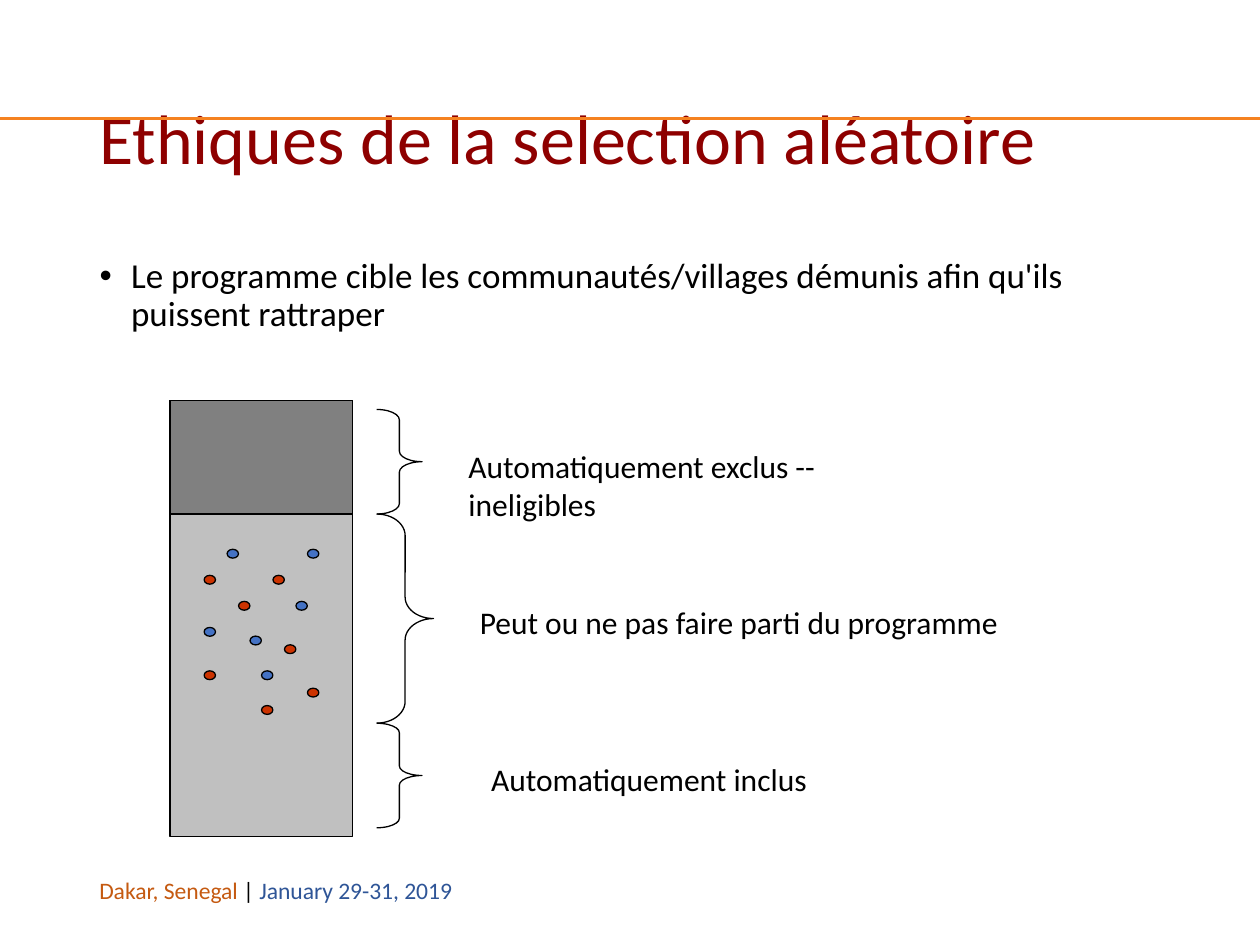
from lxml import etree
from pptx import Presentation
from pptx.dml import color
from pptx.enum import shapes, text
from pptx.oxml import ns
from pptx.util import Inches, Pt

SHAPE = shapes.MSO_SHAPE
BLACK, RED, BLUE = "000000", "CC3300", "4472C4"
RED_DOTS = [(6, 3), (7, 11), (3, 6), (0, 14), (9, 16), (5, 18), (0, 3)]
BLUE_DOTS = [(4, 10), (8, 6), (2, 0), (0, 9), (9, 0), (5, 14)]


def rgb(value):
    """Turn a hex string into a colour."""
    return color.RGBColor.from_string(value)


def inches(*box):
    """Convert a box in inches to lengths."""
    return [Inches(value) for value in box]


def add_run(paragraph, words, size, hex_color):
    """Append one formatted run to a paragraph."""
    run = paragraph.add_run()
    run.text = words
    run.font.name = "Calibri"
    run.font.size = Pt(size)
    run.font.color.rgb = rgb(hex_color)


def add_text(parent, box, runs, size, wrap=True):
    """Add a text box with one paragraph of (words, colour) runs."""
    frame = parent.shapes.add_textbox(*inches(*box)).text_frame
    frame.word_wrap = wrap
    for words, hex_color in runs:
        add_run(frame.paragraphs[0], words, size, hex_color)


def add_outlined(parent, kind, box, fill=None):
    """Add a thin black outlined shape, filled when a colour is given."""
    shape = parent.shapes.add_shape(kind, *inches(*box))
    shape.shadow.inherit = False
    shape.line.color.rgb = rgb(BLACK)
    shape.line.width = Pt(0.75)
    if fill:
        shape.fill.solid()
        shape.fill.fore_color.rgb = rgb(fill)
    else:
        shape.fill.background()
    return shape


def fill_placeholder(placeholder, box, words, size, hex_color, anchor):
    """Place a placeholder and give it one left-aligned paragraph."""
    placeholder.left, placeholder.top, placeholder.width, placeholder.height = inches(*box)
    frame = placeholder.text_frame
    frame.auto_size = text.MSO_AUTO_SIZE.NONE
    frame.word_wrap = True
    frame.vertical_anchor = anchor
    paragraph = frame.paragraphs[0]
    paragraph.alignment = text.PP_ALIGN.LEFT
    paragraph.line_spacing = 0.9
    paragraph.space_before = Pt(0)
    add_run(paragraph, words, size, hex_color)
    return paragraph


def add_bullet(paragraph, indent):
    """Give a paragraph a round bullet with a hanging indent."""
    properties = paragraph._p.get_or_add_pPr()
    properties.set("marL", str(Inches(indent)))
    properties.set("indent", str(-Inches(indent)))
    etree.SubElement(properties, ns.qn("a:buChar"), char="•")


def add_frame(slide):
    """Draw the header rule and the footer."""
    rule = slide.shapes.add_connector(
        shapes.MSO_CONNECTOR.STRAIGHT, *inches(10, 0.94, 0, 0.94))
    rule.line.color.rgb = rgb("F58220")
    rule.line.width = Pt(1.5)
    etree.SubElement(rule._element.spPr, ns.qn("a:effectLst"))
    footer = [("Dakar, Senegal ", "C55A11"), ("| ", BLACK), ("January 29-31, 2019", "2F5597")]
    add_text(slide, (0.69, 6.9, 3.07, 0.56), footer, 13.5, wrap=False)


def add_population(parent, left, top, width, height):
    """Draw the population column with its excluded part and sampled dots."""
    add_outlined(parent, SHAPE.RECTANGLE, (left, top, width, height), "C0C0C0")
    add_outlined(parent, SHAPE.RECTANGLE, (left, top, width, 0.9), "808080")
    step_x, step_y = 0.82 / 9, 1.24 / 18
    for fill, dots in ((RED, RED_DOTS), (BLUE, BLUE_DOTS)):
        for column, row in dots:
            x = left + 0.27 + column * step_x
            y = top + 1.18 + row * step_y
            add_outlined(parent, SHAPE.OVAL, (x, y, 0.09, 0.07), fill)


def add_category(parent, box, curve, label, label_box):
    """Draw a right brace with its label."""
    brace = add_outlined(parent, SHAPE.RIGHT_BRACE, box)
    brace.adjustments[0] = curve
    add_text(parent, label_box, [(label, BLACK)], 18)


def main():
    """Build and save the slide."""
    presentation = Presentation()
    presentation.slide_width, presentation.slide_height = inches(10, 7.5)
    slide = presentation.slides.add_slide(presentation.slide_layouts[1])
    fill_placeholder(slide.shapes.title, (0.69, 0.4, 8.62, 1.45),
                     "Ethiques de la selection aléatoire", 40, "8E0000",
                     text.MSO_ANCHOR.MIDDLE)
    goal = fill_placeholder(
        slide.placeholders[1], (0.69, 2, 8.62, 4.76),
        "Le programme cible les communautés/villages démunis afin qu'ils puissent rattraper",
        20, BLACK, text.MSO_ANCHOR.TOP)
    add_bullet(goal, 0.25)
    add_frame(slide)
    diagram = slide.shapes.add_group_shape()
    add_population(diagram, 1.35, 3.18, 1.45, 3.46)
    add_category(diagram, (2.99, 3.25, 0.36, 0.83), 0.23,
                 "Automatiquement exclus -- ineligibles", (3.62, 3.5, 3.63, 0.59))
    add_category(diagram, (2.99, 4.08, 0.45, 1.66), 0.38,
                 "Peut ou ne pas faire parti du programme", (3.71, 4.74, 4.63, 0.4))
    add_category(diagram, (2.99, 5.74, 0.36, 0.83), 0.21,
                 "Automatiquement inclus", (3.8, 5.98, 4.26, 0.34))
    presentation.save("out.pptx")


if __name__ == "__main__":
    main()
